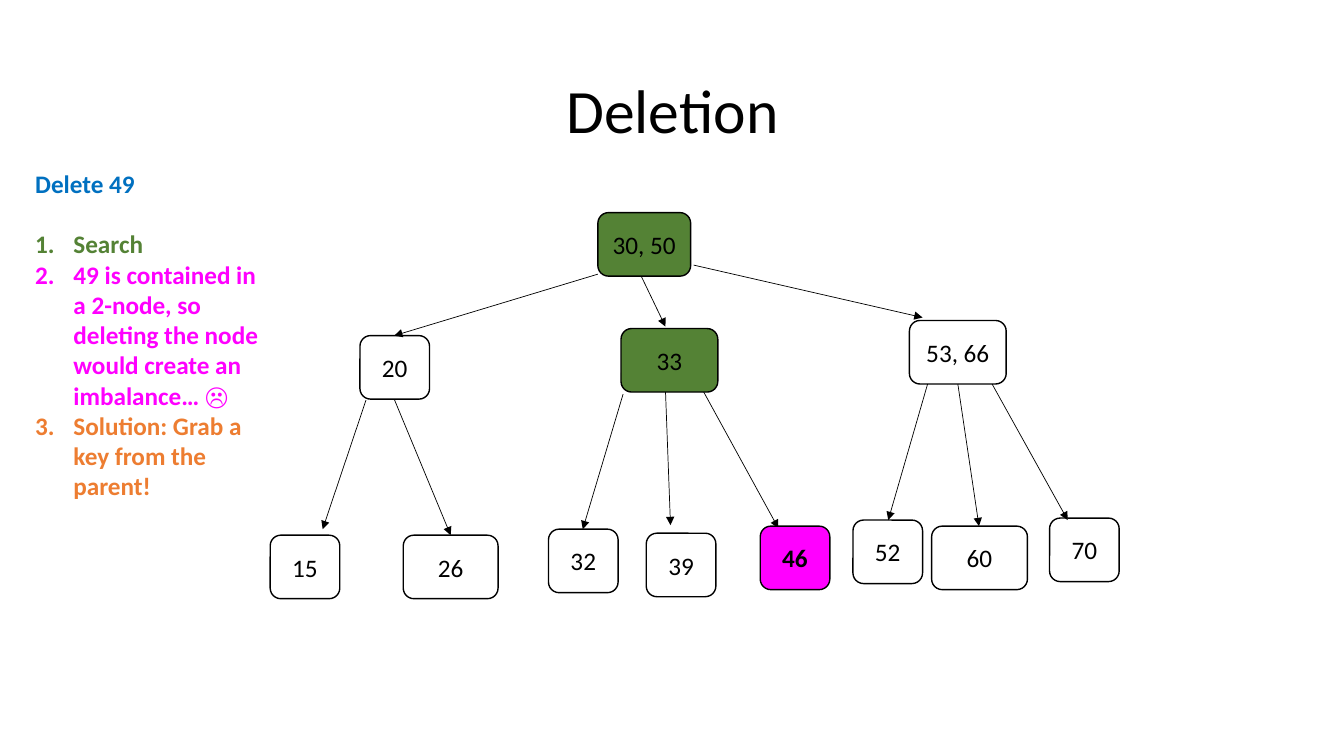
from lxml.etree import SubElement
from pptx import Presentation
from pptx.dml.color import RGBColor
from pptx.enum.shapes import MSO_CONNECTOR, MSO_SHAPE
from pptx.enum.text import MSO_ANCHOR, PP_ALIGN
from pptx.oxml.ns import qn
from pptx.util import Inches, Pt

BLACK, GREEN, MAGENTA, BLUE, ORANGE = "000000", "548235", "FF00FF", "0070C0", "ED7D31"
NODE_HEIGHT = 0.63
LEAF_WIDTH = 0.69

NODES = [
    ("30, 50", 5.93, 2.11, 0.92, GREEN),
    ("20", 3.57, 3.33, LEAF_WIDTH, None),
    ("33", 6.16, 3.26, 0.96, GREEN),
    ("53, 66", 9.02, 3.18, 0.96, None),
    ("15", 2.68, 5.31, LEAF_WIDTH, None),
    ("26", 4, 5.31, 0.94, None),
    ("32", 5.44, 5.25, LEAF_WIDTH, None),
    ("39", 6.41, 5.29, LEAF_WIDTH, None),
    ("46", 7.54, 5.22, LEAF_WIDTH, MAGENTA),
    ("52", 8.46, 5.16, LEAF_WIDTH, None),
    ("60", 9.24, 5.22, 0.95, None),
    ("70", 10.41, 5.14, LEAF_WIDTH, None),
]
ARROWS = [
    (5.93, 2.72, 3.91, 3.33),
    (6.35, 2.72, 6.6, 3.24),
    (6.88, 2.63, 9.15, 3.15),
    (3.63, 3.97, 3.2, 5.25),
    (3.91, 3.96, 4.47, 5.31),
    (6.18, 3.91, 5.78, 5.25),
    (6.6, 3.87, 6.65, 5.21),
    (6.98, 3.89, 7.72, 5.24),
    (9.2, 3.81, 8.81, 5.16),
    (9.5, 3.81, 9.71, 5.22),
    (9.84, 3.81, 10.59, 5.16),
]
STEPS = [
    ("Search", GREEN),
    ("49 is contained in a 2-node, so deleting the node would create an imbalance… ☹", MAGENTA),
    ("Solution: Grab a key from the parent!", ORANGE),
]


def color(value):
    return RGBColor.from_string(value)


def set_attributes(target, values):
    for name, value in values.items():
        setattr(target, name, value)


def write(paragraph, text, size=18, fill=BLACK, bold=False, **layout):
    paragraph.add_run().text = text
    set_attributes(paragraph, layout)
    set_attributes(paragraph.runs[0].font, {"name": "Calibri", "size": Pt(size), "bold": bold})
    paragraph.runs[0].font.color.rgb = color(fill)


def number(paragraph):
    properties = paragraph._p.get_or_add_pPr()
    properties.set("marL", str(Inches(0.38)))
    properties.set("indent", str(Inches(-0.38)))
    SubElement(properties, qn("a:buFont"), typeface="+mj-lt")
    SubElement(properties, qn("a:buAutoNum"), type="arabicPeriod")


def add_text_box(slide, left, top, width, height, anchor):
    box = slide.shapes.add_textbox(Inches(left), Inches(top), Inches(width), Inches(height))
    set_attributes(box.text_frame, {"word_wrap": True, "vertical_anchor": anchor})
    return box.text_frame


def add_title(slide):
    frame = add_text_box(slide, 0.92, 0.4, 11.5, 1.45, MSO_ANCHOR.MIDDLE)
    write(frame.paragraphs[0], "Deletion", 44, alignment=PP_ALIGN.CENTER, line_spacing=0.9)


def add_steps(slide):
    frame = add_text_box(slide, 0.25, 1.62, 2.51, 3.74, MSO_ANCHOR.TOP)
    write(frame.paragraphs[0], "Delete 49", fill=BLUE, bold=True, space_after=Pt(21.6))
    for text, fill in STEPS:
        paragraph = frame.add_paragraph()
        number(paragraph)
        write(paragraph, text, fill=fill, bold=True)


def add_arrow(slide, *points):
    connector = slide.shapes.add_connector(MSO_CONNECTOR.STRAIGHT, *map(Inches, points))
    connector.line.width = Pt(0.5)
    connector.line.color.rgb = color(BLACK)
    SubElement(connector.line._get_or_add_ln(), qn("a:tailEnd"), type="triangle")
    SubElement(connector._element.spPr, qn("a:effectLst"))


def add_node(slide, keys, left, top, width, fill):
    node = slide.shapes.add_shape(
        MSO_SHAPE.ROUNDED_RECTANGLE, Inches(left), Inches(top), Inches(width), Inches(NODE_HEIGHT)
    )
    node.shadow.inherit = False
    if fill:
        node.fill.solid()
        node.fill.fore_color.rgb = color(fill)
    else:
        node.fill.background()
    node.line.color.rgb = color(BLACK)
    node.line.width = Pt(1)
    node.text_frame.vertical_anchor = MSO_ANCHOR.MIDDLE
    write(node.text_frame.paragraphs[0], keys, bold=fill == MAGENTA, alignment=PP_ALIGN.CENTER)


def main():
    presentation = Presentation()
    set_attributes(presentation, {"slide_width": Inches(13.33), "slide_height": Inches(7.5)})
    slide = presentation.slides.add_slide(presentation.slide_layouts[6])
    add_title(slide)
    add_steps(slide)
    for arrow in ARROWS:
        add_arrow(slide, *arrow)
    for node in NODES:
        add_node(slide, *node)
    presentation.save("out.pptx")


if __name__ == "__main__":
    main()
